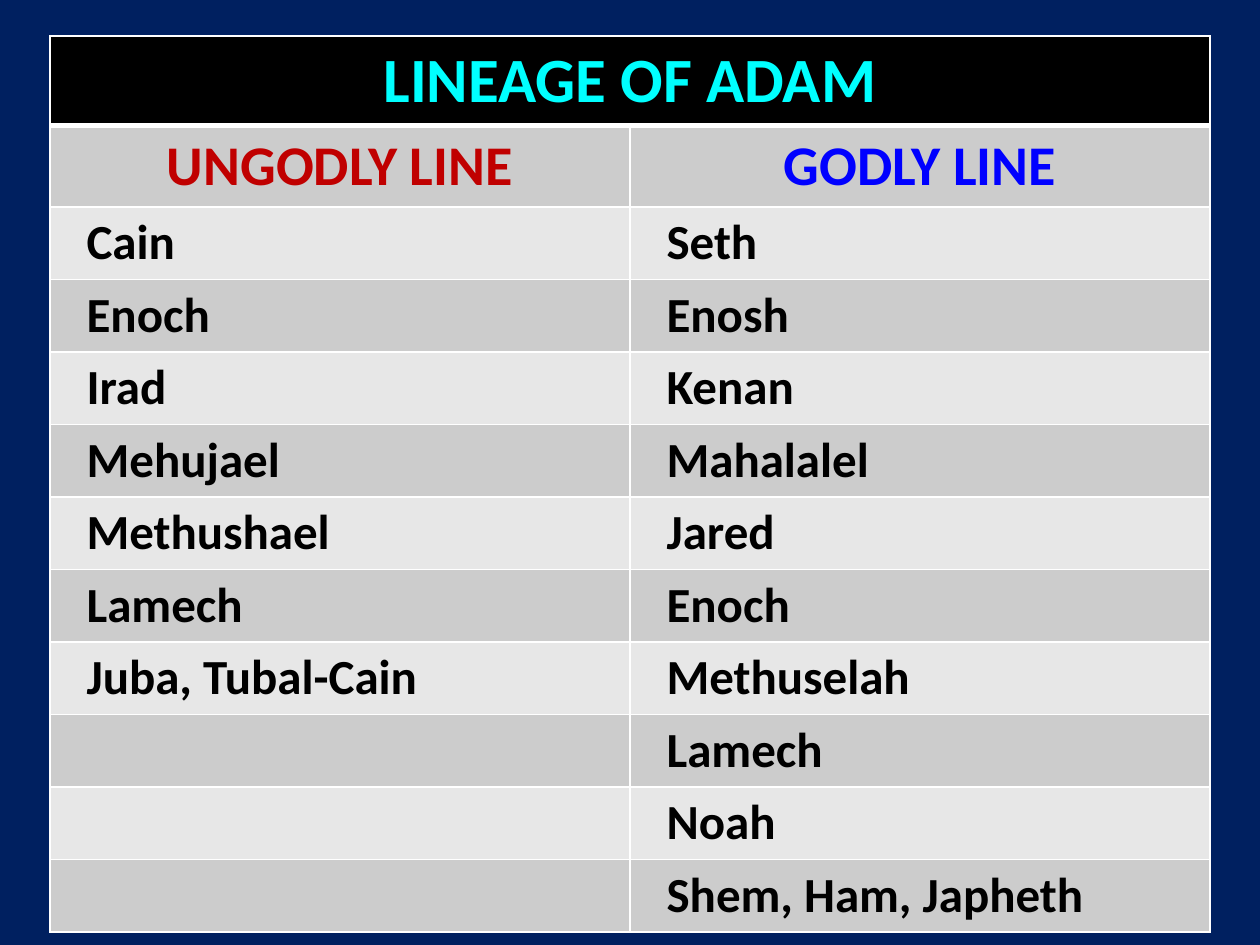
from itertools import zip_longest

from lxml import etree
from pptx import Presentation, util as u
from pptx.dml.color import RGBColor
from pptx.enum import text
from pptx.oxml import ns

PX_PER_INCH = 126
NAVY = RGBColor(0x00, 0x20, 0x60)
BLACK = RGBColor(0x00, 0x00, 0x00)
WHITE = RGBColor(0xFF, 0xFF, 0xFF)
CYAN = RGBColor(0x00, 0xFF, 0xFF)
RED = RGBColor(0xC0, 0x00, 0x00)
BLUE = RGBColor(0x00, 0x00, 0xFF)
DARK_BAND = RGBColor(0xCC, 0xCC, 0xCC)
LIGHT_BAND = RGBColor(0xE7, 0xE7, 0xE7)

UNGODLY = ["Cain", "Enoch", "Irad", "Mehujael", "Methushael", "Lamech",
           "Juba, Tubal-Cain"]
GODLY = ["Seth", "Enosh", "Kenan", "Mahalalel", "Jared", "Enoch",
         "Methuselah", "Lamech", "Noah", "Shem, Ham, Japheth"]
TITLE_HEIGHT, HEADING_HEIGHT, NAME_HEIGHT = 89, 81, 72
COLUMN_WIDTH = 580
NAME_INDENT = 24


def px(length):
    return u.Emu(round(length * 914400 / PX_PER_INCH))


def set_borders(cell, top=1, bottom=1):
    properties = cell._tc.get_or_add_tcPr()
    for side, points in (("L", 1), ("R", 1), ("T", top), ("B", bottom)):
        line = etree.SubElement(properties, ns.qn(f"a:ln{side}"), w=str(u.Pt(points)))
        solid = etree.SubElement(line, ns.qn("a:solidFill"))
        etree.SubElement(solid, ns.qn("a:srgbClr"), val=str(WHITE))


def paint_cell(cell, color, **borders):
    set_borders(cell, **borders)
    cell.fill.solid()
    cell.fill.fore_color.rgb = color


def write_cell(cell, words, size, color, centered=False):
    cell.text = words
    paragraph = cell.text_frame.paragraphs[0]
    if centered:
        paragraph.alignment = text.PP_ALIGN.CENTER
    else:
        paragraph._p.get_or_add_pPr().set("marL", str(px(NAME_INDENT)))
    font = paragraph.font
    font.name = "Calibri"
    font.size = u.Pt(size)
    font.bold = True
    font.color.rgb = color


def add_title(lineage):
    for column in range(2):
        paint_cell(lineage.cell(0, column), BLACK, bottom=3)
    title = lineage.cell(0, 0)
    title.merge(lineage.cell(0, 1))
    write_cell(title, "LINEAGE OF ADAM", 36, CYAN, centered=True)


def add_headings(lineage):
    headings = [("UNGODLY LINE", RED), ("GODLY LINE", BLUE)]
    for column, (heading, color) in enumerate(headings):
        cell = lineage.cell(1, column)
        paint_cell(cell, DARK_BAND, top=3)
        write_cell(cell, heading, 32, color, centered=True)


def add_names(lineage):
    for row, names in enumerate(zip_longest(UNGODLY, GODLY), start=2):
        for column, name in enumerate(names):
            cell = lineage.cell(row, column)
            paint_cell(cell, DARK_BAND if row % 2 else LIGHT_BAND)
            if name:
                write_cell(cell, name, 28, BLACK)


def add_lineage(slide):
    heights = [TITLE_HEIGHT, HEADING_HEIGHT] + [NAME_HEIGHT] * len(GODLY)
    lineage = slide.shapes.add_table(
        len(heights), 2, px(50), px(36), px(2 * COLUMN_WIDTH), px(sum(heights))).table
    lineage.horz_banding = False
    for row, height in zip(lineage.rows, heights):
        row.height = px(height)
    add_title(lineage)
    add_headings(lineage)
    add_names(lineage)


def main():
    deck = Presentation()
    deck.slide_width, deck.slide_height = px(1260), px(945)
    slide = deck.slides.add_slide(deck.slide_layouts[6])
    slide.background.fill.solid()
    slide.background.fill.fore_color.rgb = NAVY
    add_lineage(slide)
    deck.save("out.pptx")


if __name__ == "__main__":
    main()
